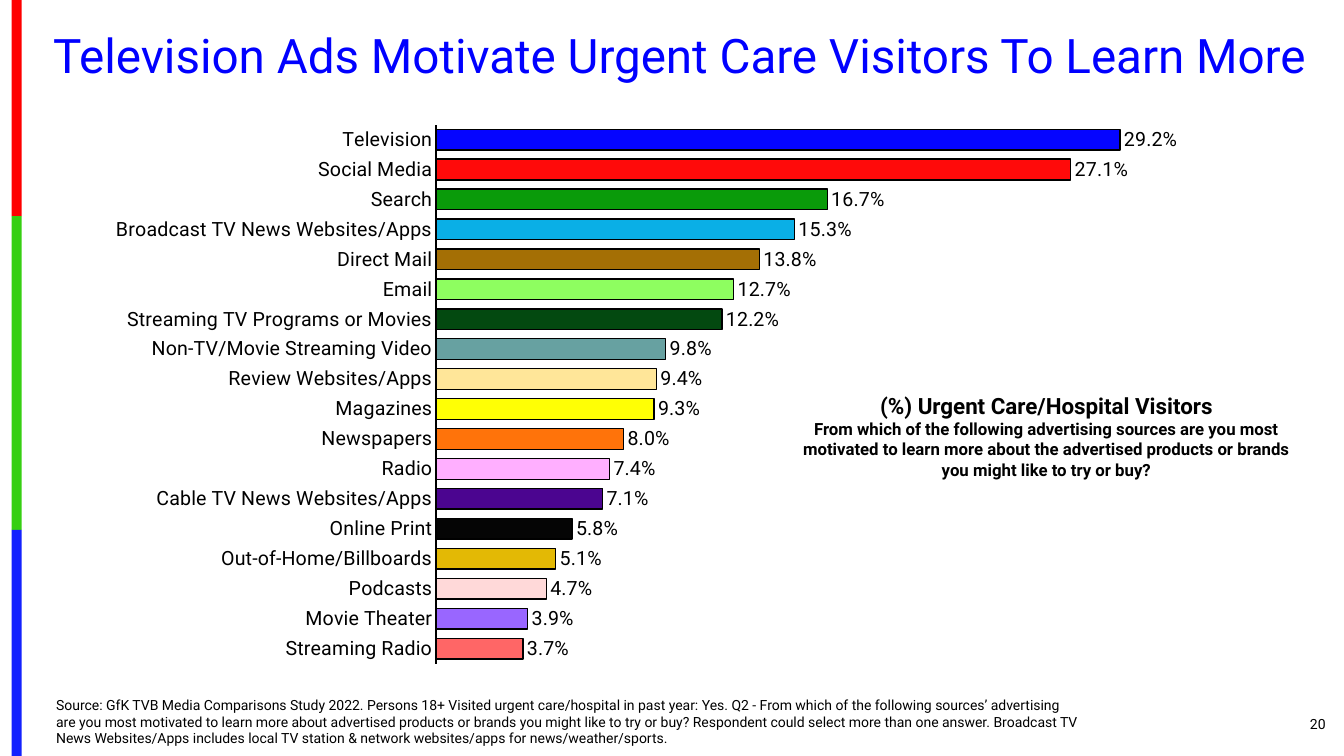
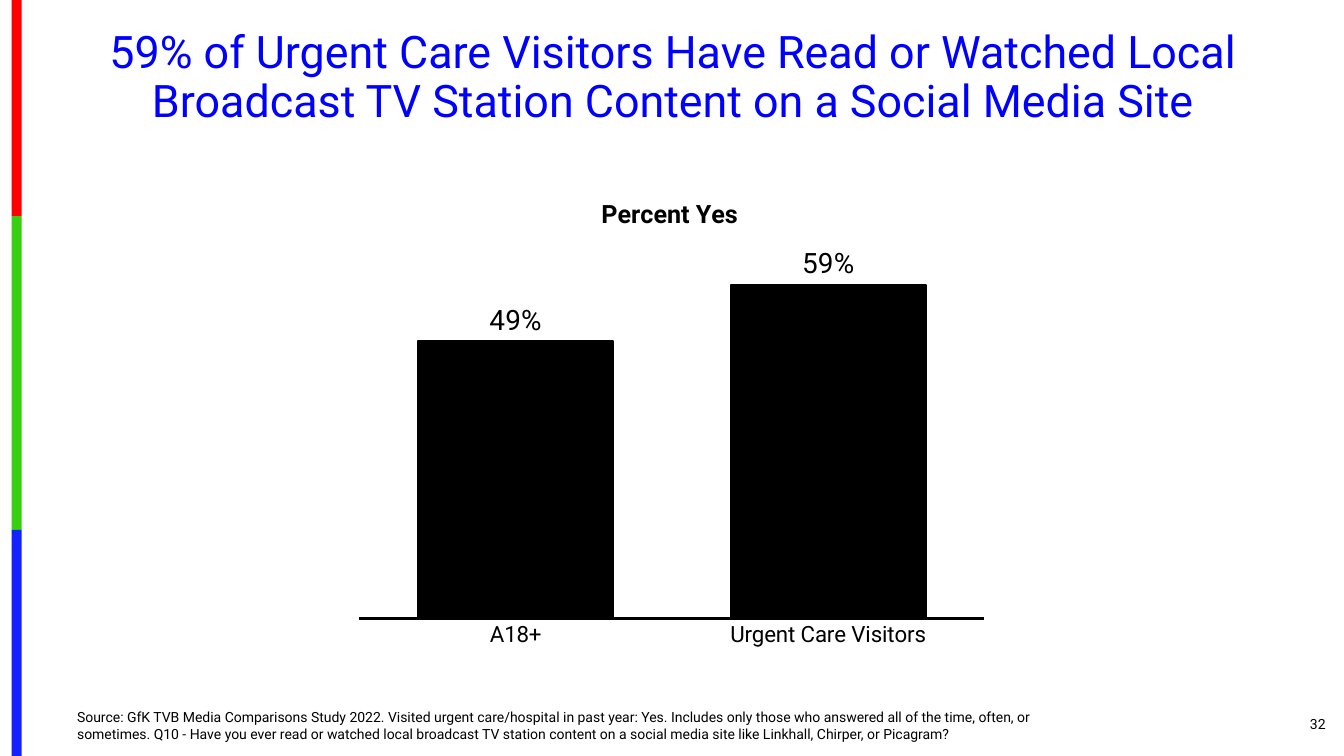
import pptx
import pptx.chart.data
import pptx.dml.color
import pptx.enum.chart
import pptx.enum.shapes
import pptx.enum.text
import pptx.oxml
import pptx.oxml.ns
import pptx.util

Pt = pptx.util.Pt
ALIGN = pptx.enum.text.PP_ALIGN
ANCHOR = pptx.enum.text.MSO_ANCHOR
CHART = pptx.enum.chart.XL_CHART_TYPE

FONT = "Roboto"
BLACK = "000000"
TITLE_BLUE = "0000FF"
PAGE_WIDTH, PAGE_HEIGHT = 960, 540
BAND_LEFT, BAND_WIDTH = 8.3, 7.2
BANDS = [("FE0000", 154.5), ("36CF12", 224), ("1322FE", 161.5)]
NUMBER_PLACE = (876, 502.5, 78, 29)

# label, value, bar colour
AD_SOURCES = [
    ("Television", 0.292, "0505FF"),
    ("Social Media", 0.271, "FF0A0A"),
    ("Search", 0.167, "0A9B0A"),
    ("Broadcast TV News Websites/Apps", 0.153, "0AAFE6"),
    ("Direct Mail", 0.138, "A46F05"),
    ("Email", 0.127, "8EFE60"),
    ("Streaming TV Programs or Movies", 0.122, "034910"),
    ("Non-TV/Movie Streaming Video", 0.098, "67A1A1"),
    ("Review Websites/Apps", 0.094, "FFE699"),
    ("Magazines", 0.093, "FFFF05"),
    ("Newspapers", 0.08, "FF730A"),
    ("Radio", 0.074, "FFAFFF"),
    ("Cable TV News Websites/Apps", 0.071, "4B0590"),
    ("Online Print", 0.058, "050505"),
    ("Out-of-Home/Billboards", 0.051, "E3B905"),
    ("Podcasts", 0.047, "FFD9D9"),
    ("Movie Theater", 0.039, "9966FF"),
    ("Streaming Radio", 0.037, "FF6666"),
]
SOCIAL_READERS = [
    ("A18+", 0.49, BLACK),
    ("Urgent Care Visitors", 0.59, BLACK),
]

PAGES = [
    {
        "title": "Television Ads Motivate Urgent Care Visitors To Learn More",
        "title_place": (8.5, 19.5, 954, 45),
        "title_size": 34,
        "number": "20",
        "source": "Source: GfK TVB Media Comparisons Study 2022. Persons 18+ Visited urgent "
                  "care/hospital in past year: Yes. Q2 - From which of the following sources’ "
                  "advertising are you most motivated to learn more about advertised products "
                  "or brands you might like to try or buy? Respondent could select more than "
                  "one answer. Broadcast TV News Websites/Apps includes local TV station & "
                  "network websites/apps for news/weather/sports.",
        "source_place": (33, 493, 747, 44),
        "question": [
            ("(%) Urgent Care/Hospital Visitors", 16),
            ("From which of the following advertising sources are you most motivated to "
             "learn more about the advertised products or brands you might like to try "
             "or buy?", 12),
        ],
        "question_place": (558, 276.5, 379, 70.5),
        "chart": {
            "kind": CHART.BAR_CLUSTERED, "rows": AD_SOURCES,
            "place": (33, 78, 879, 407), "plot": (0.317, 0.027, 0.666, 0.946),
            "maximum": 0.35, "gap": 45, "number_format": "0.0%", "reverse": True,
            "label_size": 14, "category_size": 14, "outline": 1,
        },
    },
    {
        "title": "59% of Urgent Care Visitors Have Read or Watched Local Broadcast TV "
                 "Station Content on a Social Media Site",
        "title_place": (34, 18, 894, 77),
        "title_size": 32,
        "number": "32",
        "source": "Source: GfK TVB Media Comparisons Study 2022. Visited urgent care/hospital "
                  "in past year: Yes. Includes only those who answered all of the time, often, "
                  "or sometimes. Q10 - Have you ever read or watched local broadcast TV station "
                  "content on a social media site like Linkhall, Chirper, or Picagram?",
        "source_place": (48, 490, 726, 44),
        "chart": {
            "kind": CHART.COLUMN_CLUSTERED, "rows": SOCIAL_READERS,
            "place": (256, 126, 448, 389), "plot": (0, 0.085, 1, 0.727),
            "maximum": 0.7, "gap": 60, "number_format": "0%", "reverse": False,
            "label_size": 20, "category_size": 16, "outline": 1.5,
            "title": "Percent Yes", "title_corner": (0.38, 0.03),
        },
    },
]


def rgb(code):
    return pptx.dml.color.RGBColor.from_string(code)


def apply(target, **values):
    for name, value in values.items():
        setattr(target, name, value)


def style_font(font, size, color=BLACK, bold=False):
    apply(font, name=FONT, size=Pt(size), bold=bold)
    font.color.rgb = rgb(color)


def style_line(line, width):
    line.color.rgb = rgb(BLACK)
    line.width = Pt(width)


def points(place):
    return [Pt(length) for length in place]


def add_text(page, place, lines, anchor=ANCHOR.TOP, align=ALIGN.LEFT, bold=False):
    """Add a text box with one paragraph for each (text, size) pair."""
    frame = page.shapes.add_textbox(*points(place)).text_frame
    apply(frame, word_wrap=True, vertical_anchor=anchor)
    for index, (text, size) in enumerate(lines):
        para = frame.add_paragraph() if index else frame.paragraphs[0]
        apply(para, text=text, alignment=align)
        style_font(para.font, size, bold=bold)


def set_title(page, text, place, size):
    title = page.shapes.title
    apply(title, **dict(zip(("left", "top", "width", "height"), points(place))))
    title.text_frame.text = text
    apply(title.text_frame, word_wrap=True, vertical_anchor=ANCHOR.TOP)
    para = title.text_frame.paragraphs[0]
    apply(para, alignment=ALIGN.CENTER, line_spacing=0.9)
    style_font(para.font, size, TITLE_BLUE)


def set_layout(parent, index, place, inner=False):
    """Fix a chart part at (x, y[, w, h]), as fractions of the chart."""
    for old in parent.findall(pptx.oxml.ns.qn("c:layout")):
        parent.remove(old)
    tags = '<c:layoutTarget val="inner"/>' if inner else ""
    tags += '<c:xMode val="edge"/><c:yMode val="edge"/>'
    tags += "".join(f'<c:{side} val="{value}"/>' for side, value in zip("xywh", place))
    parent.insert(index, pptx.oxml.parse_xml(
        f'<c:layout {pptx.oxml.ns.nsdecls("c")}>'
        f"<c:manualLayout>{tags}</c:manualLayout></c:layout>"))


def add_bars(page, look):
    labels, values, colors = zip(*look["rows"])
    data = pptx.chart.data.CategoryChartData(number_format=look["number_format"])
    data.categories = labels
    data.add_series("Series 1", values)
    chart = page.shapes.add_chart(look["kind"], *points(look["place"]), data).chart
    style_font(chart.font, 10)
    apply(chart, has_legend=False, has_title="title" in look)
    if chart.has_title:
        frame = chart.chart_title.text_frame
        frame.text = look["title"]
        style_font(frame.paragraphs[0].font, 18, bold=True)
        set_layout(chart.chart_title.element if hasattr(chart.chart_title, "element")
                   else frame.element.getparent().getparent(), 1, look["title_corner"])

    apply(chart.value_axis, visible=False, has_major_gridlines=False,
          minimum_scale=0, maximum_scale=look["maximum"])
    none = pptx.enum.chart.XL_TICK_MARK.NONE
    axis = chart.category_axis
    apply(axis, major_tick_mark=none, minor_tick_mark=none,
          has_major_gridlines=False, reverse_order=look["reverse"])
    style_font(axis.tick_labels.font, look["category_size"])
    style_line(axis.format.line, 1.5)

    plot = chart.plots[0]
    apply(plot, gap_width=look["gap"], vary_by_categories=False, has_data_labels=True)
    apply(plot.data_labels, show_value=True, number_format=look["number_format"],
          number_format_is_linked=False,
          position=pptx.enum.chart.XL_LABEL_POSITION.OUTSIDE_END)
    style_font(plot.data_labels.font, look["label_size"])
    for index, color in enumerate(colors):
        bar = plot.series[0].points[index].format
        bar.fill.solid()
        bar.fill.fore_color.rgb = rgb(color)
        style_line(bar.line, look["outline"])
    area = chart.element.find(".//" + pptx.oxml.ns.qn("c:plotArea"))
    set_layout(area, 0, look["plot"], inner=True)


def add_bands(page):
    """Draw the side bands and hand them to the layout that all slides share."""
    top = 0
    for index, (color, height) in enumerate(BANDS):
        band = page.shapes.add_shape(
            pptx.enum.shapes.MSO_SHAPE.RECTANGLE,
            *points((BAND_LEFT, top, BAND_WIDTH, height)))
        band.shadow.inherit = False
        band.fill.solid()
        band.fill.fore_color.rgb = rgb(color)
        band.line.fill.background()
        band.element.nvSpPr.cNvPr.set("id", str(101 + index))
        page.slide_layout.shapes.element.append(band.element)
        top += height


def main():
    deck = pptx.Presentation()
    apply(deck, slide_width=Pt(PAGE_WIDTH), slide_height=Pt(PAGE_HEIGHT))
    for index, content in enumerate(PAGES):
        page = deck.slides.add_slide(deck.slide_layouts[5])
        if index == 0:
            add_bands(page)
        set_title(page, content["title"], content["title_place"], content["title_size"])
        add_bars(page, content["chart"])
        if "question" in content:
            add_text(page, content["question_place"], content["question"],
                     align=ALIGN.CENTER, bold=True)
        add_text(page, content["source_place"], [(content["source"], 10)], ANCHOR.BOTTOM)
        add_text(page, NUMBER_PLACE, [(content["number"], 10)], ANCHOR.MIDDLE, ALIGN.RIGHT)
    deck.save("out.pptx")


if __name__ == "__main__":
    main()
